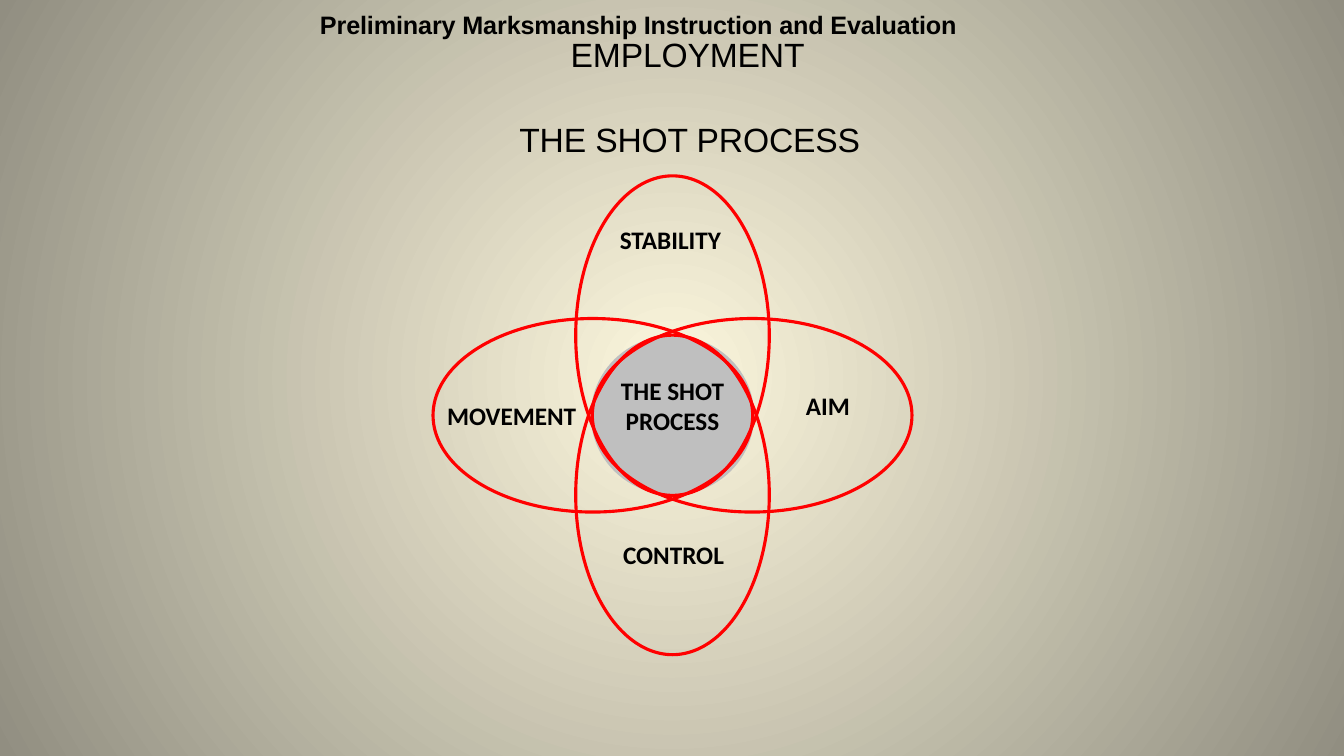
from dataclasses import dataclass

from lxml.etree import SubElement
from pptx import Presentation
from pptx.dml.color import RGBColor
from pptx.enum.shapes import MSO_SHAPE
from pptx.enum.text import MSO_ANCHOR, MSO_AUTO_SIZE, PP_ALIGN
from pptx.oxml.ns import qn
from pptx.shapes.autoshape import Shape
from pptx.slide import Slide
from pptx.util import Inches, Pt

COLOURS = {
    "glow": "FCF7DD",
    "edge": "918E81",
    "core": "BFBFBF",
    "petal": "FF0000",
    "text": "000000",
}
CENTRE_X, CENTRE_Y = 6.67, 4.12
PETAL_WIDTH, PETAL_HEIGHT = 1.92, 3.17
PETAL_SHIFT = 0.79


@dataclass
class Petal:
    across: int
    down: int
    rotation: int = 0


@dataclass
class Label:
    text: str
    left: float
    top: float
    width: float = 1.38
    height: float = 0.4


PETALS = [Petal(0, 1), Petal(0, -1), Petal(1, 0, 90), Petal(-1, 0, 90)]

LABELS = [
    Label("THE SHOT PROCESS", 5.98, 3.67, height=0.71),
    Label("STABILITY", 5.96, 2.18),
    Label("AIM", 7.52, 3.82),
    Label("CONTROL", 5.99, 5.3),
    Label("MOVEMENT", 4.26, 3.92, width=1.63),
]

HEADING = dict(size=24, font="Arial", spacing=-0.1, margins=(0.34, 0.01, 0, 0))


def colour(name: str) -> RGBColor:
    return RGBColor.from_string(COLOURS[name])


def place(shape: Shape, left: float, top: float, width: float, height: float) -> Shape:
    shape.left, shape.top = Inches(left), Inches(top)
    shape.width, shape.height = Inches(width), Inches(height)
    return shape


def add_textbox(slide: Slide, *box: float) -> Shape:
    return slide.shapes.add_textbox(*map(Inches, box))


def write(shape: Shape, text: str, *, size: float = 18, font: str = "Calibri",
          bold: bool = False, spacing: float = 0, line_spacing: float = 1.0,
          margins: tuple[float, ...] = (0.1, 0.05, 0.1, 0.05)) -> None:
    """Put one centred paragraph in a shape; margins run left, top, right, bottom."""
    frame = shape.text_frame
    frame.word_wrap = True
    frame.auto_size = MSO_AUTO_SIZE.SHAPE_TO_FIT_TEXT
    frame.vertical_anchor = MSO_ANCHOR.TOP
    (frame.margin_left, frame.margin_top,
     frame.margin_right, frame.margin_bottom) = map(Inches, margins)
    paragraph = frame.paragraphs[0]
    paragraph.alignment = PP_ALIGN.CENTER
    paragraph.line_spacing = line_spacing
    run = paragraph.add_run()
    run.text = text
    run.font.size, run.font.name, run.font.bold = Pt(size), font, bold
    run.font.color.rgb = colour("text")
    if spacing:
        run._r.get_or_add_rPr().set("spc", str(round(spacing * 100)))


def add_ellipse(slide: Slide, width: float, height: float,
                x: float = CENTRE_X, y: float = CENTRE_Y) -> Shape:
    """Add an ellipse around a centre point."""
    box = (x - width / 2, y - height / 2, width, height)
    ellipse = slide.shapes.add_shape(MSO_SHAPE.OVAL, *map(Inches, box))
    ellipse.shadow.inherit = False
    return ellipse


def add_petal(slide: Slide, petal: Petal) -> None:
    outline = add_ellipse(slide, PETAL_WIDTH, PETAL_HEIGHT,
                          CENTRE_X + petal.across * PETAL_SHIFT,
                          CENTRE_Y + petal.down * PETAL_SHIFT)
    outline.rotation = petal.rotation
    outline.fill.background()
    outline.line.color.rgb = colour("petal")
    outline.line.width = Pt(2.25)


def paint_background(slide: Slide) -> None:
    """Fill the background with a circular gradient from the middle."""
    fill = slide.background.fill
    fill.gradient()
    for stop, name, position in zip(fill.gradient_stops, ("glow", "edge"), (0, 1)):
        stop.color.rgb = colour(name)
        stop.position = position
    gradient = next(slide.background._cSld.iter(qn("a:gradFill")))
    gradient.remove(gradient.find(qn("a:lin")))
    circle = SubElement(gradient, qn("a:path"), path="circle")
    SubElement(circle, qn("a:fillToRect"), l="50000", t="50000", r="50000", b="50000")


def main() -> None:
    presentation = Presentation()
    presentation.slide_width, presentation.slide_height = Inches(13.33), Inches(7.5)
    slide = presentation.slides.add_slide(presentation.slide_layouts[5])
    paint_background(slide)

    # Headings
    write(add_textbox(slide, 2.06, 0.08, 8.54, 0.32),
          "Preliminary Marksmanship Instruction and Evaluation",
          font="Arial", bold=True, spacing=-0.1, line_spacing=1.04,
          margins=(0, 0, 0, 0))
    write(place(slide.shapes.title, 1.65, 0.33, 10, 0.42), "EMPLOYMENT", **HEADING)
    write(add_textbox(slide, 1.67, 1.17, 10, 0.42), "THE SHOT PROCESS", **HEADING)

    # Core circle and the four petals around it
    core = add_ellipse(slide, 1.62, 1.58)
    core.fill.solid()
    core.fill.fore_color.rgb = colour("core")
    core.line.fill.background()
    for petal in PETALS:
        add_petal(slide, petal)

    # Labels
    for label in LABELS:
        write(add_textbox(slide, label.left, label.top, label.width, label.height),
              label.text, bold=True)

    presentation.save("out.pptx")


if __name__ == "__main__":
    main()
